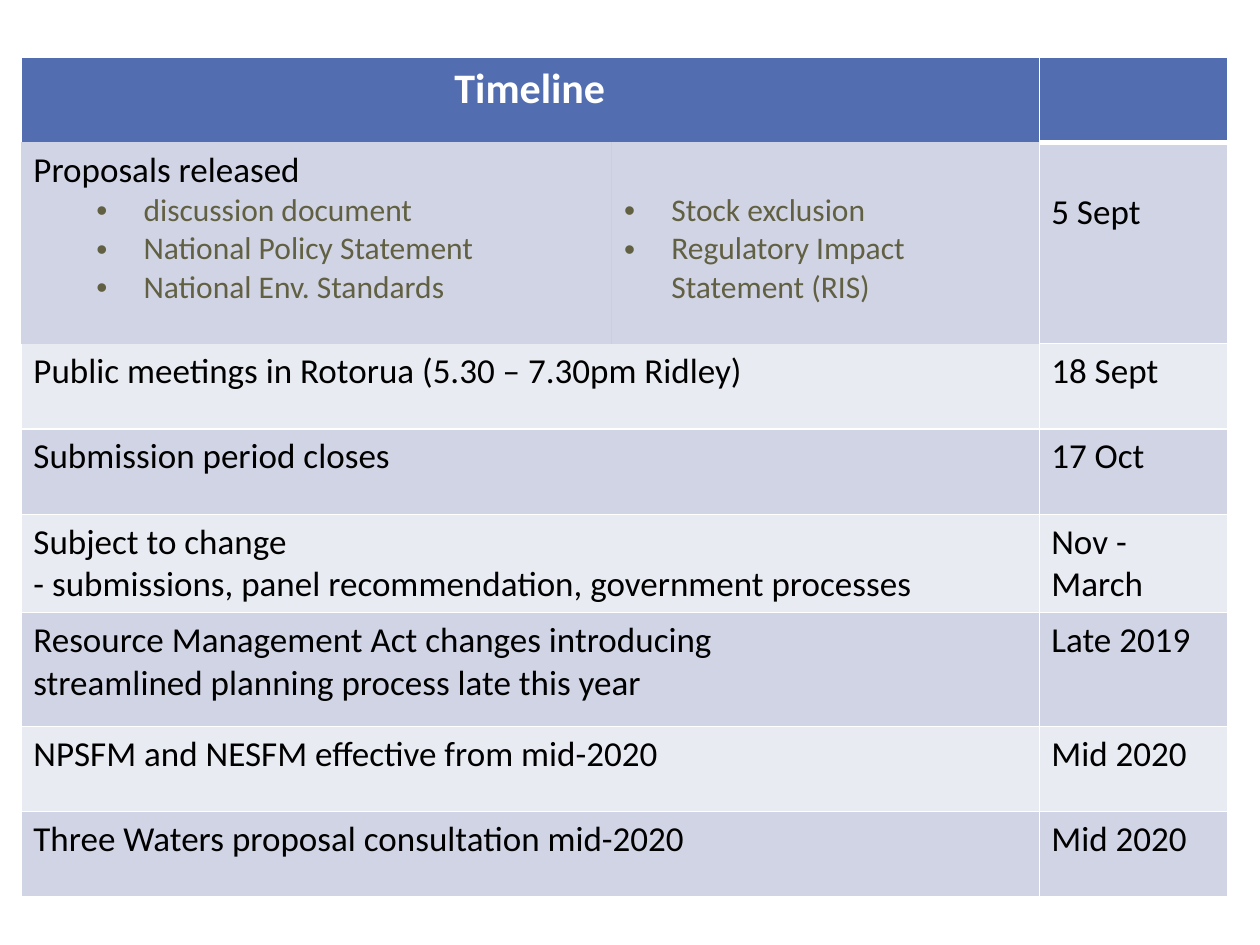
from lxml import etree
from pptx import Presentation
from pptx.dml.color import RGBColor
from pptx.enum.text import PP_ALIGN
from pptx.oxml.ns import qn
from pptx.util import Cm, Pt

CENTER = PP_ALIGN.CENTER
FONT = "Calibri"
WHITE, BLACK, OLIVE = "FFFFFF", "000000", "616042"
HEADER, BAND, LIGHT, DIVIDER = "526DB0", "D1D4E4", "E9EBF2", "C6CFE4"
NO_STYLE = "{2D5ABB26-0587-4C30-8999-92F81FD0307C}"
ONE_LINE = 0.86  # height of a 20 pt line in cm

COLUMN_WIDTHS = (11.91, 8.61, 3.81)
ROW_HEIGHTS = (1.72, 4.06, 1.72, 1.72, 1.94, 2.29, 1.72, 1.72)

MILESTONES = (
    ("Public meetings in Rotorua (5.30 – 7.30pm Ridley)", "18 Sept"),
    ("Submission period closes", "17 Oct"),
    ("Subject to change\v- submissions, panel recommendation, government processes",
     "Nov - March"),
    ("Resource Management Act changes introducing\v"
     "streamlined planning process late this year", "Late 2019"),
    ("NPSFM and NESFM effective from mid-2020", "Mid 2020"),
    ("Three Waters proposal consultation mid-2020", "Mid 2020"),
)
DOCUMENTS = ("discussion document", "National Policy Statement", "National Env. Standards")
REGULATIONS = ("Stock exclusion", "Regulatory Impact Statement (RIS)")


def rgb(value):
    return RGBColor.from_string(value)


class TimelineSlide:
    """Holds the slide and the style of its table."""

    def __init__(self, slide):
        self.slide = slide

    def table(self, left, top, widths, heights):
        frame = self.slide.shapes.add_table(
            len(heights), len(widths), Cm(left), Cm(top), Cm(sum(widths)), Cm(sum(heights)))
        table = frame.table
        table._tbl.tblPr.find(qn("a:tableStyleId")).text = NO_STYLE
        for column, width in zip(table.columns, widths):
            column.width = Cm(width)
        for row, height in zip(table.rows, heights):
            row.height = Cm(height)
        return table

    def cell(self, cell, fill, **borders):
        """Fill a cell; borders map L, R, T, B to (colour, points)."""
        cell.fill.solid()
        cell.fill.fore_color.rgb = rgb(fill)
        properties = cell._tc.get_or_add_tcPr()
        sides = [side for side in "LRTB" if side in borders]
        for position, side in enumerate(sides):
            colour, points = borders[side]
            line = etree.Element(qn(f"a:ln{side}"), w=str(Pt(points)))
            solid = etree.SubElement(line, qn("a:solidFill"))
            etree.SubElement(solid, qn("a:srgbClr"), val=colour)
            properties.insert(position, line)

    def text(self, paragraph, text, size=20, colour=BLACK, bold=False):
        paragraph.text = text
        for run in paragraph.runs:
            font = run.font
            font.name, font.size, font.bold = FONT, Pt(size), bold
            font.color.rgb = rgb(colour)

    def bullet(self, paragraph, text, indent):
        properties = paragraph._p.get_or_add_pPr()
        properties.set("marL", str(Cm(indent)))
        properties.set("indent", str(-Cm(0.95)))
        etree.SubElement(properties, qn("a:buFont"), typeface="Arial")
        etree.SubElement(properties, qn("a:buChar"), char="•")
        self.text(paragraph, text, 18, OLIVE)


def main():
    presentation = Presentation()
    presentation.slide_width, presentation.slide_height = Cm(25.4), Cm(19.05)
    blank = presentation.slide_layouts[6]
    page = TimelineSlide(presentation.slides.add_slide(blank))
    timeline = page.table(0.42, 1.15, COLUMN_WIDTHS, ROW_HEIGHTS)

    edge, hairline = (WHITE, 1), (WHITE, 0.25)
    date_edges = {"L": hairline, "R": edge, "T": edge, "B": edge}

    # Every row but the proposals spans its first two columns
    for row in range(len(ROW_HEIGHTS)):
        if row != 1:
            timeline.cell(row, 0).merge(timeline.cell(row, 1))

    # Header
    page.cell(timeline.cell(0, 0), HEADER, L=edge, T=edge, R=hairline)
    page.cell(timeline.cell(0, 1), HEADER, T=edge, R=hairline)
    page.cell(timeline.cell(0, 2), HEADER, **{**date_edges, "B": (WHITE, 3)})
    title = timeline.cell(0, 0).text_frame.paragraphs[0]
    page.text(title, "Timeline", 24, WHITE, bold=True)
    title.alignment = CENTER

    # Proposals
    documents, regulations, release_date = (timeline.cell(1, column) for column in range(3))
    page.cell(documents, BAND, R=(DIVIDER, 1))
    page.cell(regulations, BAND, L=(DIVIDER, 1), R=hairline)
    page.cell(release_date, BAND, **date_edges)
    page.text(documents.text_frame.paragraphs[0], "Proposals released")
    for name in DOCUMENTS:
        page.bullet(documents.text_frame.add_paragraph(), name, 2.22)
    for index, name in enumerate(REGULATIONS):
        frame = regulations.text_frame
        paragraph = frame.add_paragraph() if index else frame.paragraphs[0]
        page.bullet(paragraph, name, 0.95)
    page.text(release_date.text_frame.paragraphs[0], "5 Sept")
    for lowered in (regulations, release_date):
        lowered.margin_top = Cm(0.13 + ONE_LINE)

    # Milestones
    for row, (milestone, date) in enumerate(MILESTONES, start=2):
        fill = BAND if row % 2 else LIGHT
        edges = {"R": hairline, "B": edge}
        if row > 2:
            edges["T"] = edge
        page.cell(timeline.cell(row, 0), fill, L=edge, **edges)
        page.cell(timeline.cell(row, 1), fill, **edges)
        page.cell(timeline.cell(row, 2), fill, **date_edges)
        page.text(timeline.cell(row, 0).text_frame.paragraphs[0], milestone)
        page.text(timeline.cell(row, 2).text_frame.paragraphs[0], date)

    presentation.save("out.pptx")


if __name__ == "__main__":
    main()
